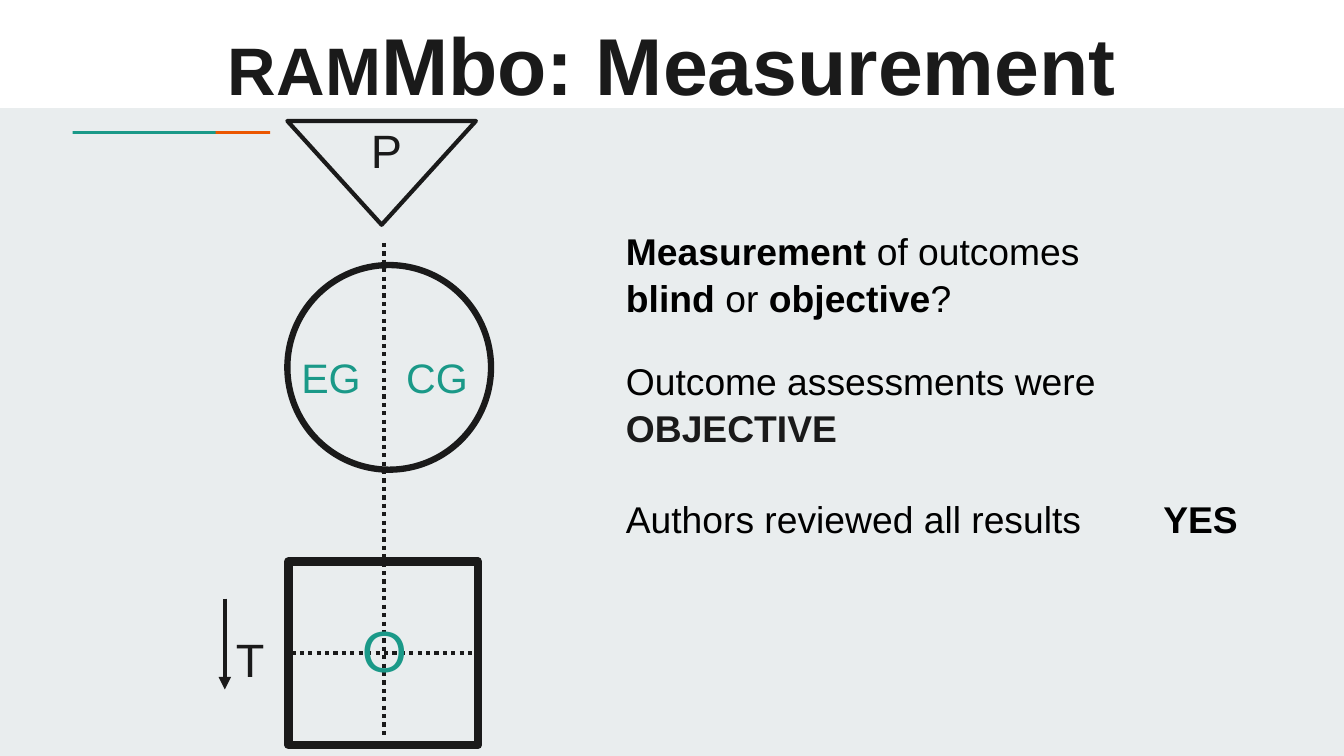
from lxml.etree import SubElement
from pptx import Presentation
from pptx.dml.color import RGBColor
from pptx.enum.dml import MSO_LINE
from pptx.enum.shapes import MSO_CONNECTOR, MSO_SHAPE
from pptx.enum.text import MSO_ANCHOR, PP_ALIGN
from pptx.oxml.ns import qn
from pptx.util import Pt

PX = 9144
SIZE = (1333, 750)
THEME = {
    "font": "Arial",
    "page": "E9EDEE", "band": "FFFFFF", "ink": "1A1A1A",
    "black": "000000", "teal": "1A9988", "orange": "EB5600",
    "title": 57.6, "small": 48, "body": 26.6,
    "group": 29.4, "letter": 33.4, "outcome": 41.4,
}

BARS = [
    ((0, 0, 1333, 107), "band"),
    ((127, 130, 141, 3), "orange"),
    ((72, 130, 142, 3), "teal"),
]
SHAPES = [
    (MSO_SHAPE.RECTANGLE, (286, 557, 188, 182), 6, 0),
    (MSO_SHAPE.ISOSCELES_TRIANGLE, (285, 120, 187, 103), 3, 180),
    (MSO_SHAPE.OVAL, (285, 263, 202, 203), 4.5, 0),
]
LINES = [
    ((223, 594, 223, 684), "arrow"),
    ((381, 241, 381, 731), "dots"),
    ((289, 648, 472, 648), "dots"),
]
LABELS = [
    ("EG", (289, 345, 85, 60), "group", "teal"),
    ("CG", (393, 345, 90, 60), "group", "teal"),
    ("O", (349, 605, 66, 80), "outcome", "teal"),
    ("T", (224, 621, 50, 67), "letter", "ink"),
    ("P", (358, 116, 52, 67), "letter", "ink"),
]
TITLE = [[("RAM", "small", "ink", True), ("Mbo: Measurement", "title", "ink", True)]]
ASKED = [
    [("Measurement ", "body", "black", True), ("of outcomes", "body", "black", False)],
    [("blind ", "body", "black", True), ("or ", "body", "black", False),
     ("objective", "body", "black", True), ("?", "body", "black", False)],
]
FOUND = [
    [("Outcome assessments were ", "body", "black", False),
     ("OBJECTIVE", "body", "ink", True)],
    [("Authors reviewed all results\t", "body", "black", False),
     ("YES", "body", "black", True)],
]
BODY = {"line_spacing": 1.04}
TAB = 533
GAP = Pt(32)


def color(name):
    return RGBColor.from_string(THEME[name])


def scale(box):
    return [n * PX for n in box]


def apply(target, values):
    for key, value in values.items():
        setattr(target, key, value)


def add_text(slide, box, paras, style, frame_style=None, gap=None, tab=None):
    frame = slide.shapes.add_textbox(*scale(box)).text_frame
    apply(frame, {"word_wrap": True, **(frame_style or {})})
    for i, runs in enumerate(paras):
        para = frame.add_paragraph() if i else frame.paragraphs[0]
        apply(para, style)
        if i and gap:
            para.space_before = gap
        if tab:
            stops = SubElement(para._p.get_or_add_pPr(), qn("a:tabLst"))
            SubElement(stops, qn("a:tab"), pos=str(tab * PX), algn="l")
        for text, size, ink, bold in runs:
            run = para.add_run()
            run.text = text
            apply(run.font, {"name": THEME["font"], "size": Pt(THEME[size]), "bold": bold})
            run.font.color.rgb = color(ink)


def add_bar(slide, box, fill):
    bar = slide.shapes.add_shape(MSO_SHAPE.RECTANGLE, *scale(box))
    bar.shadow.inherit = False
    bar.fill.solid()
    bar.fill.fore_color.rgb = color(fill)
    bar.line.fill.background()


def add_shape(slide, kind, box, width, turn):
    shape = slide.shapes.add_shape(kind, *scale(box))
    shape.shadow.inherit = False
    shape.rotation = turn
    shape.fill.background()
    shape.line.color.rgb = color("ink")
    shape.line.width = Pt(width)


def add_line(slide, ends, kind):
    link = slide.shapes.add_connector(MSO_CONNECTOR.STRAIGHT, *scale(ends))
    link.line.color.rgb = color("ink")
    link.line.width = Pt(3)
    if kind == "dots":
        link.line.dash_style = MSO_LINE.ROUND_DOT
        link.line._ln.find(qn("a:prstDash")).set("val", "sysDot")
    else:
        SubElement(link.line._ln, qn("a:tailEnd"), type="triangle")
    SubElement(link._element.spPr, qn("a:effectLst"))


def main():
    deck = Presentation()
    deck.slide_width, deck.slide_height = scale(SIZE)
    slide = deck.slides.add_slide(deck.slide_layouts[6])
    slide.background.fill.solid()
    slide.background.fill.fore_color.rgb = color("page")
    for bar in BARS:
        add_bar(slide, *bar)
    for line in LINES:
        add_line(slide, *line)
    for shape in SHAPES:
        add_shape(slide, *shape)
    for text, box, size, ink in LABELS:
        add_text(slide, box, [[(text, size, ink, False)]], {})
    add_text(slide, (106, 4, 1121, 120), TITLE, {"alignment": PP_ALIGN.CENTER},
             {"vertical_anchor": MSO_ANCHOR.BOTTOM, "margin_bottom": 13 * PX})
    add_text(slide, (611, 220, 611, 145), ASKED, BODY)
    add_text(slide, (611, 349, 640, 369), FOUND, BODY, gap=GAP, tab=TAB)
    deck.save("out.pptx")


if __name__ == "__main__":
    main()
